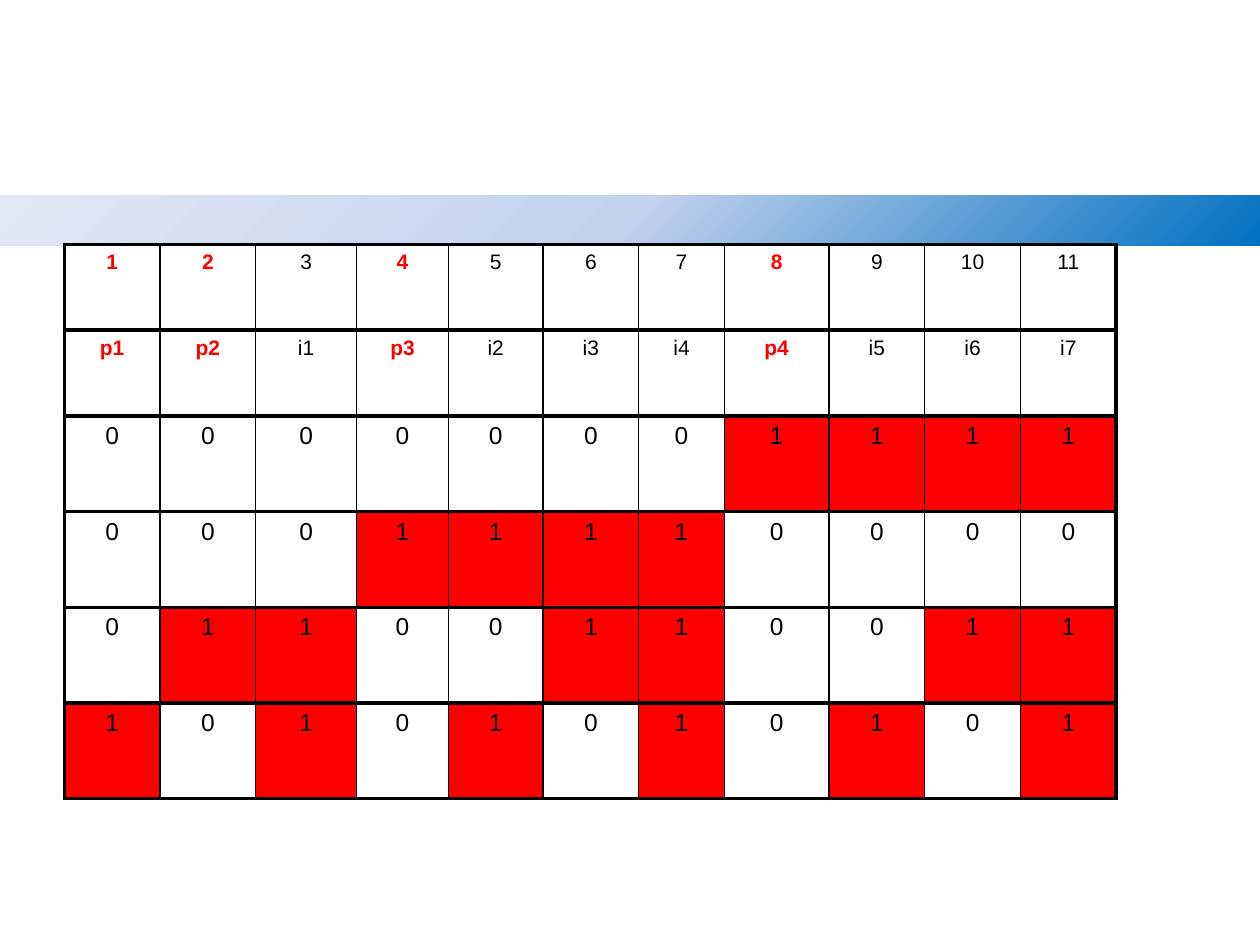
import pptx
import pptx.dml.color
import pptx.enum.shapes
import pptx.enum.text
import pptx.oxml
import pptx.oxml.ns
import pptx.util
from lxml import etree

RGBColor = pptx.dml.color.RGBColor
Inches = pptx.util.Inches
Pt = pptx.util.Pt

RED = RGBColor(0xFF, 0x00, 0x00)
BLACK = RGBColor(0x00, 0x00, 0x00)
WHITE = RGBColor(0xFF, 0xFF, 0xFF)
DEEP_BLUE = RGBColor(0x00, 0x70, 0xC0)
PALE_BLUE = RGBColor(0xC2, 0xD1, 0xED)
MIST_BLUE = RGBColor(0xE1, 0xE8, 0xF5)

COLUMN_WIDTHS = [0.76, 0.76, 0.8, 0.73, 0.75, 0.76, 0.68, 0.83, 0.76, 0.76, 0.76]
ROW_HEIGHTS = [0.68] * 2 + [0.76] * 4
POSITIONS = range(1, len(COLUMN_WIDTHS) + 1)
PARITY_POSITIONS = [1, 2, 4, 8]
THICK, THIN = 2.25, 1


def add_gradient_band(slide, left, top, width, height):
    """Band whose colour spreads from its bottom right corner."""
    band = slide.shapes.add_shape(
        pptx.enum.shapes.MSO_SHAPE.RECTANGLE, left, top, width, height)
    band.shadow.inherit = False
    band.line.fill.background()
    stops = "".join(
        f'<a:gs pos="{share * 1000}"><a:srgbClr val="{color}"/></a:gs>'
        for share, color in [(0, DEEP_BLUE), (50, PALE_BLUE), (100, MIST_BLUE)])
    gradient = pptx.oxml.parse_xml(
        f'<a:gradFill {pptx.oxml.ns.nsdecls("a")}><a:gsLst>{stops}</a:gsLst>'
        '<a:path path="circle"><a:fillToRect l="100000" t="100000"/></a:path>'
        '</a:gradFill>')
    band.element.spPr.find(pptx.oxml.ns.qn("a:prstGeom")).addnext(gradient)


def set_borders(cell, left, right):
    """Black cell borders; top and bottom are always thick."""
    properties = cell._tc.get_or_add_tcPr()
    for side, points in [("L", left), ("R", right), ("T", THICK), ("B", THICK)]:
        line = etree.SubElement(
            properties, pptx.oxml.ns.qn(f"a:ln{side}"), w=str(Pt(points)))
        fill = etree.SubElement(line, pptx.oxml.ns.qn("a:solidFill"))
        etree.SubElement(fill, pptx.oxml.ns.qn("a:srgbClr"), val=str(BLACK))


def write_cell(cell, text, size, color=BLACK, bold=False):
    cell.text = text
    paragraph = cell.text_frame.paragraphs[0]
    paragraph.alignment = pptx.enum.text.PP_ALIGN.CENTER
    font = paragraph.font
    font.name, font.size, font.bold = "Arial", Pt(size), bold
    font.color.rgb = color


def bit_labels():
    """Names of the code bits: p for parity, i for information."""
    labels = []
    for position in POSITIONS:
        parity = sum(p <= position for p in PARITY_POSITIONS)
        is_parity = position in PARITY_POSITIONS
        labels.append(f"p{parity}" if is_parity else f"i{position - parity}")
    return labels


def add_code_table(slide, left, top):
    """Code positions, bit names and the binary form of each position."""
    rows = [[str(position) for position in POSITIONS], bit_labels()]
    for weight in reversed(PARITY_POSITIONS):
        rows.append(["1" if position & weight else "0" for position in POSITIONS])

    table = slide.shapes.add_table(
        len(rows), len(COLUMN_WIDTHS), left, top,
        Inches(sum(COLUMN_WIDTHS)), Inches(sum(ROW_HEIGHTS))).table
    table.first_row = table.horz_banding = False
    for column, width in zip(table.columns, COLUMN_WIDTHS):
        column.width = Inches(width)
    for row, height in zip(table.rows, ROW_HEIGHTS):
        row.height = Inches(height)

    for row_index, texts in enumerate(rows):
        for position, text in zip(POSITIONS, texts):
            cell = table.cell(row_index, position - 1)
            set_borders(cell,
                        THICK if position == POSITIONS[0] else THIN,
                        THICK if position == POSITIONS[-1] else THIN)
            if row_index < 2:
                is_parity = position in PARITY_POSITIONS
                write_cell(cell, text, 12, RED if is_parity else BLACK, is_parity)
                cell.fill.background()
            else:
                write_cell(cell, text, 14)
                cell.fill.solid()
                cell.fill.fore_color.rgb = RED if text == "1" else WHITE


def main():
    presentation = pptx.Presentation()
    presentation.slide_width = Inches(10)
    presentation.slide_height = Inches(7.5)
    slide = presentation.slides.add_slide(presentation.slide_layouts[6])
    add_gradient_band(slide, 0, Inches(1.55), presentation.slide_width, Inches(0.4))
    add_code_table(slide, Inches(0.51), Inches(1.94))
    presentation.save("out.pptx")


if __name__ == "__main__":
    main()
